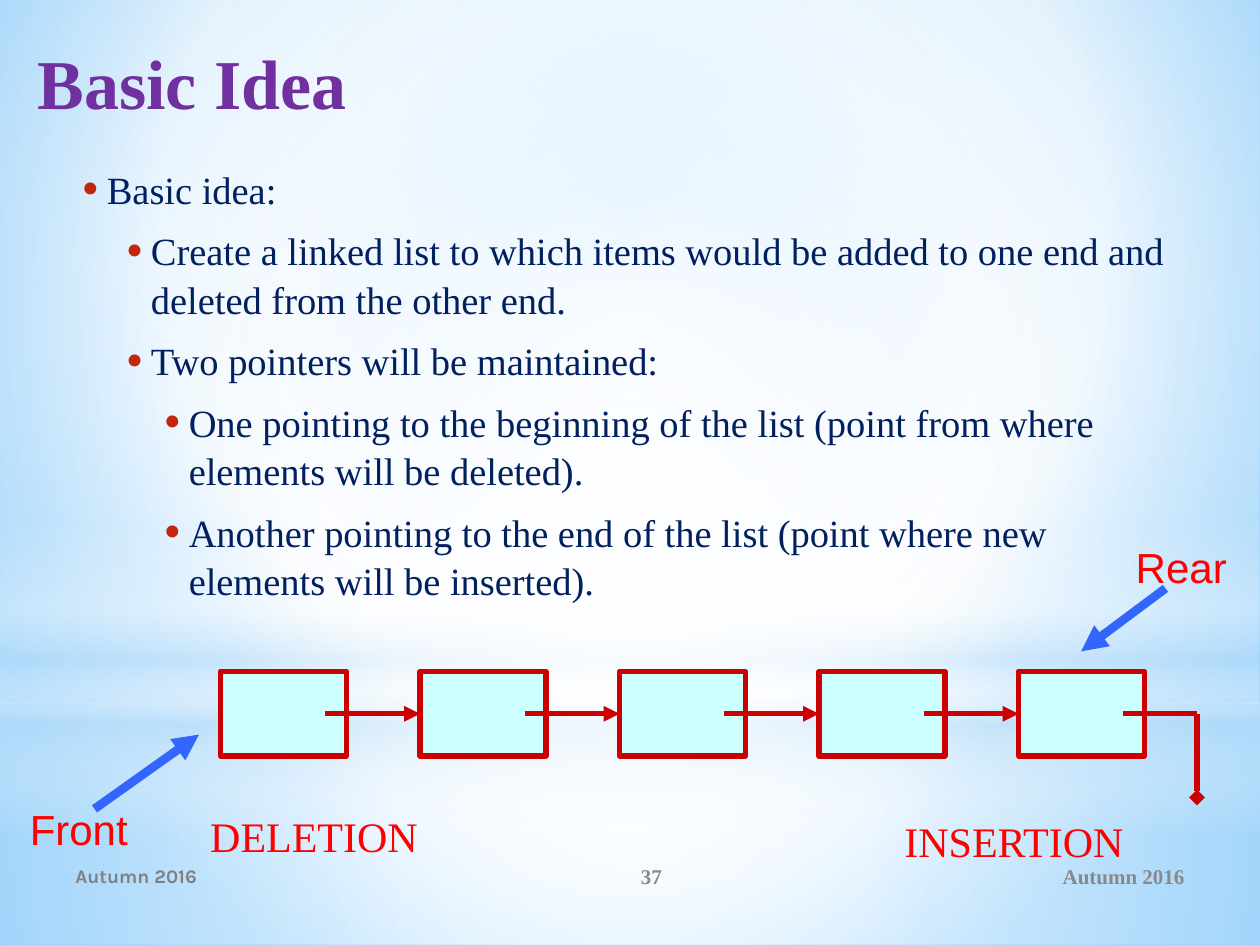
from lxml.etree import SubElement
from pptx import Presentation
from pptx.dml.color import RGBColor
from pptx.enum.shapes import MSO_CONNECTOR, MSO_SHAPE
from pptx.enum.text import MSO_ANCHOR, PP_ALIGN
from pptx.oxml.ns import qn
from pptx.util import Inches, Pt

SERIF = "Times New Roman"
RED, DARK_RED, BLUE = "FF0000", "CC0000", "3366FF"
BODY = [
    (0, "Basic idea:"),
    (1, "Create a linked list to which items would be added to one end and "
        "deleted from the other end."),
    (1, "Two pointers will be maintained:"),
    (2, "One pointing to the beginning of the list (point from where "
        "elements will be deleted)."),
    (2, "Another pointing to the end of the list (point where new "
        "elements will be inserted)."),
]
LEVEL_INDENTS = [0.25, 0.6, 0.9]


def color(value):
    return RGBColor.from_string(value)


def add_element(parent, tag, **attributes):
    return SubElement(parent, qn(tag), {key: str(value) for key, value in attributes.items()})


def set_gradient(fill, owner, stops, focus=None):
    """Radial towards the focus rectangle, or top to bottom without one."""
    fill.solid()
    solid = owner.find(qn("a:solidFill"))
    gradient = owner.makeelement(qn("a:gradFill"), {"rotWithShape": "1"})
    stop_list = add_element(gradient, "a:gsLst")
    for position, value, alpha in stops:
        stop = add_element(stop_list, "a:gs", pos=position * 1000)
        stop_color = add_element(stop, "a:srgbClr", val=value)
        if alpha < 100:
            add_element(stop_color, "a:alpha", val=alpha * 1000)
    if focus:
        radial = add_element(gradient, "a:path", path="circle")
        sides = {side: inset * 1000 for side, inset in zip("ltrb", focus)}
        add_element(radial, "a:fillToRect", **sides)
    else:
        add_element(gradient, "a:lin", ang=5400000, scaled=0)
    owner.replace(solid, gradient)


def add_glow(slide, kind, top, height, stops, focus=None):
    shape = slide.shapes.add_shape(kind, 0, Inches(top), Inches(10), Inches(height))
    shape.shadow.inherit = False
    shape.line.fill.background()
    set_gradient(shape.fill, shape.element.spPr, stops, focus)


def add_background(slide):
    slide.background.fill.solid()
    properties = slide.element.find(".//" + qn("p:bgPr"))
    set_gradient(slide.background.fill, properties,
                 [(0, "9ED5FF", 100), (60, "FFFFFF", 100), (100, "5BB9FF", 100)],
                 (20, 10, 20, 60))
    center = (50, 50, 50, 50)
    add_glow(slide, MSO_SHAPE.RECTANGLE, 5.58, 1.92,
             [(0, "FFFFFF", 91), (37, "FFFFFF", 76), (100, "B4DCFA", 79)], center)
    add_glow(slide, MSO_SHAPE.RECTANGLE, 0, 5.58,
             [(0, "FFFFFF", 89), (48, "FFFFFF", 62), (100, "B4DCFA", 79)], center)
    add_glow(slide, MSO_SHAPE.RECTANGLE, 4.12, 2.5,
             [(0, "FFFFFF", 0), (29, "FFFFFF", 30), (45, "B4DCFA", 40),
              (55, "FFFFFF", 26), (65, "B4DCFA", 60), (100, "FFFFFF", 0)])
    add_glow(slide, MSO_SHAPE.OVAL, 1.75, 5.58,
             [(0, "FFFFFF", 100), (56, "FFFFFF", 0)], center)


def add_run(paragraph, text, size, font, value, bold=False):
    run = paragraph.add_run()
    run.text = text
    run.font.size = Pt(size)
    run.font.name = font
    run.font.bold = bold
    run.font.color.rgb = color(value)


def add_text(slide, box, text, size, font, value, bold=False,
             align=PP_ALIGN.LEFT, anchor=MSO_ANCHOR.TOP, wrap=True):
    shape = slide.shapes.add_textbox(*map(Inches, box))
    frame = shape.text_frame
    frame.word_wrap = wrap
    frame.vertical_anchor = anchor
    paragraph = frame.paragraphs[0]
    paragraph.alignment = align
    add_run(paragraph, text, size, font, value, bold)
    return frame


def add_body(slide):
    frame = slide.shapes.add_textbox(Inches(0.5), Inches(1.25), Inches(9), Inches(4.95)).text_frame
    frame.word_wrap = True
    for index, (level, text) in enumerate(BODY):
        paragraph = frame.add_paragraph() if index else frame.paragraphs[0]
        paragraph.level = level
        paragraph.line_spacing = 1.05
        paragraph.space_before = Pt(4.4)
        paragraph.space_after = Pt(3)
        properties = paragraph._p.get_or_add_pPr()
        properties.set("marL", str(Inches(LEVEL_INDENTS[level])))
        properties.set("indent", str(Inches(-0.2)))
        bullet_color = add_element(properties, "a:buClr")
        add_element(bullet_color, "a:srgbClr", val="C3260C")
        add_element(properties, "a:buSzPct", val=130000)
        add_element(properties, "a:buFont", typeface=SERIF)
        add_element(properties, "a:buChar", char="•")
        add_run(paragraph, text, 22, SERIF, "002060")


def add_line(slide, start, end, value, width, tail=None):
    line = slide.shapes.add_connector(MSO_CONNECTOR.STRAIGHT, *map(Inches, start + end))
    line.line.color.rgb = color(value)
    line.line.width = Pt(width)
    if tail:
        add_element(line.line._get_or_add_ln(), "a:tailEnd", type=tail)
    add_element(line.element.spPr, "a:effectLst")
    return line


def add_node(slide, left, top, width, height):
    node = slide.shapes.add_shape(MSO_SHAPE.RECTANGLE, *map(Inches, (left, top, width, height)))
    node.shadow.inherit = False
    node.fill.solid()
    node.fill.fore_color.rgb = color("CCFFFF")
    node.line.color.rgb = color(DARK_RED)
    node.line.width = Pt(3)
    return node


def add_linked_list(slide):
    left, top, width, height = 1.75, 5.33, 1, 0.67
    pitch, middle = 19 / 12, top + height / 2
    lefts = [left + pitch * index for index in range(5)]
    nodes = [add_node(slide, x, top, width, height) for x in lefts]
    # Each link starts inside its node and ends at the next one
    for x, following in zip(lefts, nodes[1:]):
        link = add_line(slide, (x + 0.83, middle), (x + pitch, middle), DARK_RED, 3, "triangle")
        link.end_connect(following, 1)
    # Null link of the last node
    corner = (9.5, middle)
    add_line(slide, (lefts[-1] + 0.83, middle), corner, DARK_RED, 3)
    add_line(slide, corner, (9.5, 6.33), DARK_RED, 3, "diamond")


def add_pointer(slide, text, left, top, start, end):
    frame = add_text(slide, (left, top, 1.25, 0.5), text, 24, "Arial", RED,
                     align=PP_ALIGN.CENTER)
    frame.paragraphs[0].space_before = Pt(2)
    add_line(slide, start, end, BLUE, 5, "triangle")


def main():
    presentation = Presentation()
    presentation.slide_width = Inches(10)
    presentation.slide_height = Inches(7.5)
    slide = presentation.slides.add_slide(presentation.slide_layouts[6])
    add_background(slide)

    # Footer
    middle = MSO_ANCHOR.MIDDLE
    add_text(slide, (6.75, 6.75, 2.75, 0.4), "Autumn 2016", 12, SERIF, "898989", True,
             PP_ALIGN.RIGHT, middle)
    add_text(slide, (0.5, 6.75, 3.67, 0.4), "Autumn 2016", 11, "Karla", "808080", True,
             anchor=middle)
    add_text(slide, (4.17, 6.75, 2, 0.4), "37", 12, SERIF, "898989", True,
             PP_ALIGN.CENTER, middle)

    # Linked list with its two pointers
    add_linked_list(slide)
    add_pointer(slide, "Front", 0, 6.33, (0.75, 6.42), (1.58, 5.83))
    add_pointer(slide, "Rear", 8.75, 4.25, (9.25, 4.67), (8.58, 5.17))
    add_text(slide, (1.57, 6.38, 1.96, 0.5), "DELETION", 24, SERIF, RED, wrap=False)
    add_text(slide, (7.08, 6.42, 2.07, 0.5), "INSERTION", 24, SERIF, RED, wrap=False)

    # Title and body
    title = add_text(slide, (0.2, 0.21, 9.53, 1.25), "Basic Idea", 40, SERIF, "7030A0", True)
    title.margin_top = Inches(0.1)
    add_body(slide)
    presentation.save("out.pptx")


if __name__ == "__main__":
    main()
